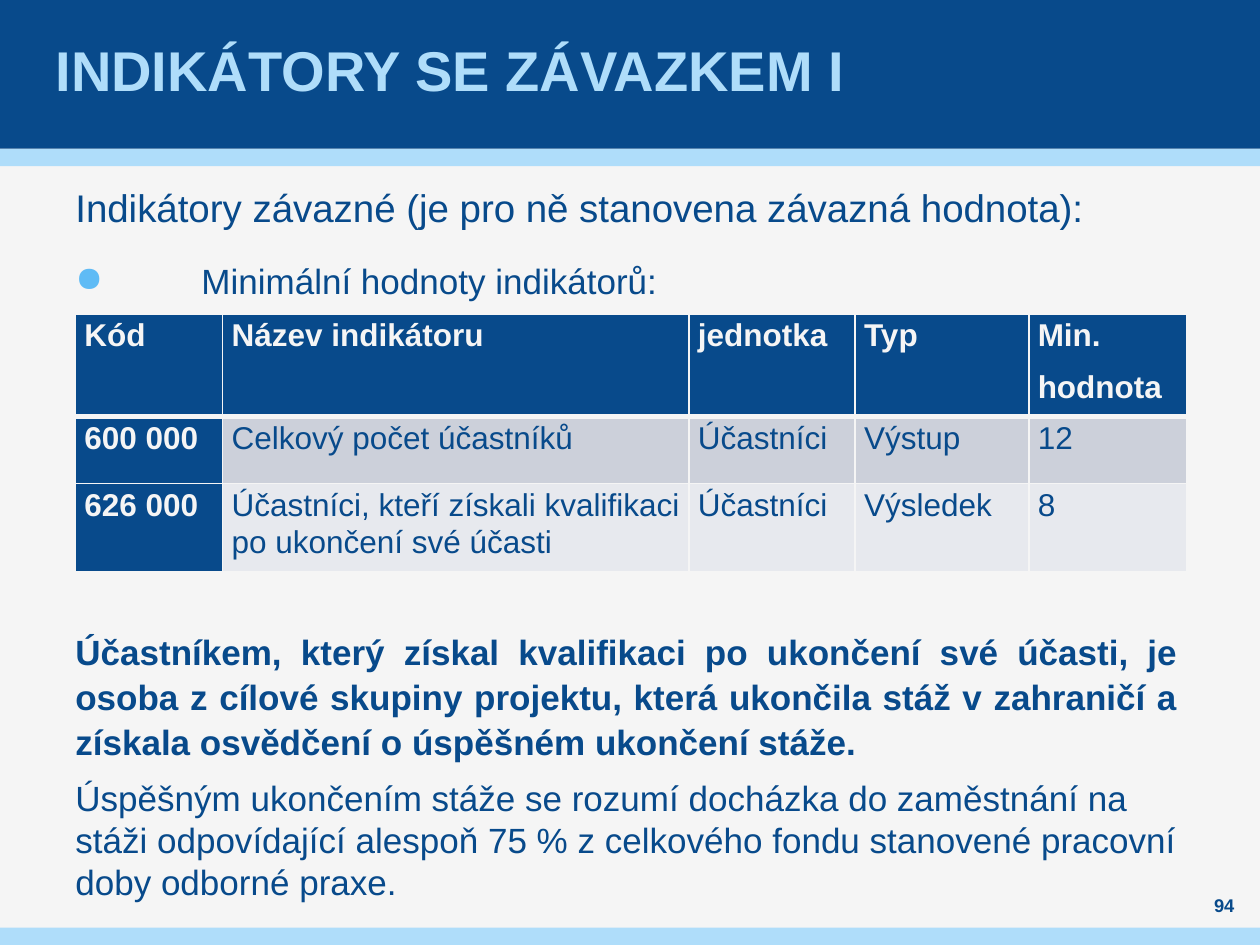
from lxml import etree
from pptx import Presentation
from pptx import util as u
from pptx.dml.color import RGBColor
from pptx.enum import shapes, text
from pptx.oxml import ns

NAVY = RGBColor(0x08, 0x4A, 0x8B)
SKY = RGBColor(0xAF, 0xDD, 0xFA)
BULLET = RGBColor(0x5F, 0xBB, 0xF5)
PAPER = RGBColor(0xF5, 0xF5, 0xF5)
BANDS = (RGBColor(0xCC, 0xD0, 0xDA), RGBColor(0xE7, 0xE9, 0xEE))

WIDTH, HEIGHT = 25.4, 19.05
COLUMNS = (2.97, 9.4, 3.35, 3.5, 3.18)
ROWS = (2.06, 1.35, 1.78)
INDICATORS = (
    ("Kód", "Název indikátoru", "jednotka", "Typ", "Min.\nhodnota"),
    ("600 000", "Celkový počet účastníků", "Účastníci", "Výstup", "12"),
    ("626 000", "Účastníci, kteří získali kvalifikaci po ukončení své účasti",
     "Účastníci", "Výsledek", "8"),
)
CELL_SPACING = dict(line_spacing=1.07, space_after=u.Pt(8))
BODY_SPACING = dict(line_spacing=u.Pt(28.8), space_before=u.Pt(6), space_after=u.Pt(6))


def apply(target, values):
    """Set every attribute in values on target."""
    for name, value in values.items():
        setattr(target, name, value)


def write(para, words, size, color=NAVY, bold=False, **layout):
    """Fill a paragraph with one formatted span."""
    apply(para, layout)
    span = para.add_run()
    span.text = words
    apply(span.font, dict(name="Arial", size=u.Pt(size), bold=bold))
    span.font.color.rgb = color


def add_band(page, top, height, color):
    """Add a full-width coloured band."""
    band = page.shapes.add_shape(
        shapes.MSO_SHAPE.RECTANGLE, 0, u.Cm(top), u.Cm(WIDTH), u.Cm(height))
    band.shadow.inherit = False
    band.fill.solid()
    band.fill.fore_color.rgb = color
    band.line.fill.background()


def add_text(page, place, margins=(0, 0), anchor=text.MSO_ANCHOR.TOP):
    """Add a wrapping text box and return its frame."""
    frame = page.shapes.add_textbox(*map(u.Cm, place)).text_frame
    side, end = map(u.Cm, margins)
    apply(frame, dict(word_wrap=True, vertical_anchor=anchor, margin_left=side,
                      margin_right=side, margin_top=end, margin_bottom=end))
    return frame


def add_bullet(para, indent):
    """Give a paragraph a hanging round bullet."""
    properties = para._p.get_or_add_pPr()
    properties.set("marL", str(u.Cm(indent)))
    properties.set("indent", str(-u.Cm(indent)))
    color = etree.SubElement(properties, ns.qn("a:buClr"))
    etree.SubElement(color, ns.qn("a:srgbClr"), val=str(BULLET))
    etree.SubElement(properties, ns.qn("a:buChar"), char="●")


def add_borders(cell, widths):
    """Draw the cell borders with widths in points by side."""
    properties = cell._tc.get_or_add_tcPr()
    for side, width in widths.items():
        line = etree.SubElement(properties, ns.qn(f"a:ln{side}"), w=str(u.Pt(width)))
        fill = etree.SubElement(line, ns.qn("a:solidFill"))
        etree.SubElement(fill, ns.qn("a:srgbClr"), val=str(PAPER))


def fill_cell(cell, words, row, column):
    """Style and fill one cell by its position."""
    heading = row == 0 or column == 0
    add_borders(cell, dict(L=1, R=1, T=3 if row == 1 else 1, B=3 if row == 0 else 1))
    cell.fill.solid()
    cell.fill.fore_color.rgb = NAVY if heading else BANDS[row - 1]
    apply(cell, dict(margin_left=u.Cm(0.18), margin_right=u.Cm(0.18),
                     margin_top=u.Cm(0.03), margin_bottom=0))
    for index, line in enumerate(words.split("\n")):
        para = cell.text_frame.add_paragraph() if index else cell.text_frame.paragraphs[0]
        write(para, line, 18, PAPER if heading else NAVY, heading, **CELL_SPACING)


def add_indicators(page):
    """Add the table of indicators."""
    table = page.shapes.add_table(
        len(ROWS), len(COLUMNS), u.Cm(1.52), u.Cm(6.34),
        u.Cm(sum(COLUMNS)), u.Cm(sum(ROWS))).table
    for column, width in zip(table.columns, COLUMNS):
        column.width = u.Cm(width)
    for row, height in enumerate(ROWS):
        table.rows[row].height = u.Cm(height)
        for column, words in enumerate(INDICATORS[row]):
            fill_cell(table.cell(row, column), words, row, column)


def main():
    """Build the slide and save it."""
    deck = Presentation()
    apply(deck, dict(slide_width=u.Cm(WIDTH), slide_height=u.Cm(HEIGHT)))
    page = deck.slides.add_slide(deck.slide_layouts[6])
    page.background.fill.solid()
    page.background.fill.fore_color.rgb = PAPER
    for top, height, color in ((3, 0.35, SKY), (0, 3, NAVY), (18.7, 0.35, SKY)):
        add_band(page, top, height, color)

    title = add_text(page, (1.02, -0.1, 23.4, 3), (0.1, 0), text.MSO_ANCHOR.MIDDLE)
    write(title.paragraphs[0], "INDIKÁTORY SE ZÁVAZKEM I", 32, SKY, True)

    body = add_text(page, (1.52, 3.63, 22.4, 12.2))
    write(body.paragraphs[0], "Indikátory závazné (je pro ně stanovena závazná hodnota):",
          22, **BODY_SPACING)
    item = body.add_paragraph()
    write(item, "Minimální hodnoty indikátorů:", 20, **BODY_SPACING)
    add_bullet(item, 2.54)

    number = add_text(page, (24.03, 18, 1.3, 0.5), anchor=text.MSO_ANCHOR.MIDDLE)
    write(number.paragraphs[0], "94", 10.5, bold=True, alignment=text.PP_ALIGN.CENTER)

    add_indicators(page)

    notes = add_text(page, (1.27, 12.52, 22.73, 5.84), (0.25, 0.13))
    write(notes.paragraphs[0],
          "Účastníkem, který získal kvalifikaci po ukončení své účasti, je osoba z cílové "
          "skupiny projektu, která ukončila stáž v zahraničí a získala osvědčení o úspěšném "
          "ukončení stáže.", 20, bold=True, alignment=text.PP_ALIGN.JUSTIFY, **CELL_SPACING)
    write(notes.add_paragraph(),
          "Úspěšným ukončením stáže se rozumí docházka do zaměstnání na stáži odpovídající "
          "alespoň 75 % z celkového fondu stanovené pracovní doby odborné praxe.", 20)
    deck.save("out.pptx")


if __name__ == "__main__":
    main()
